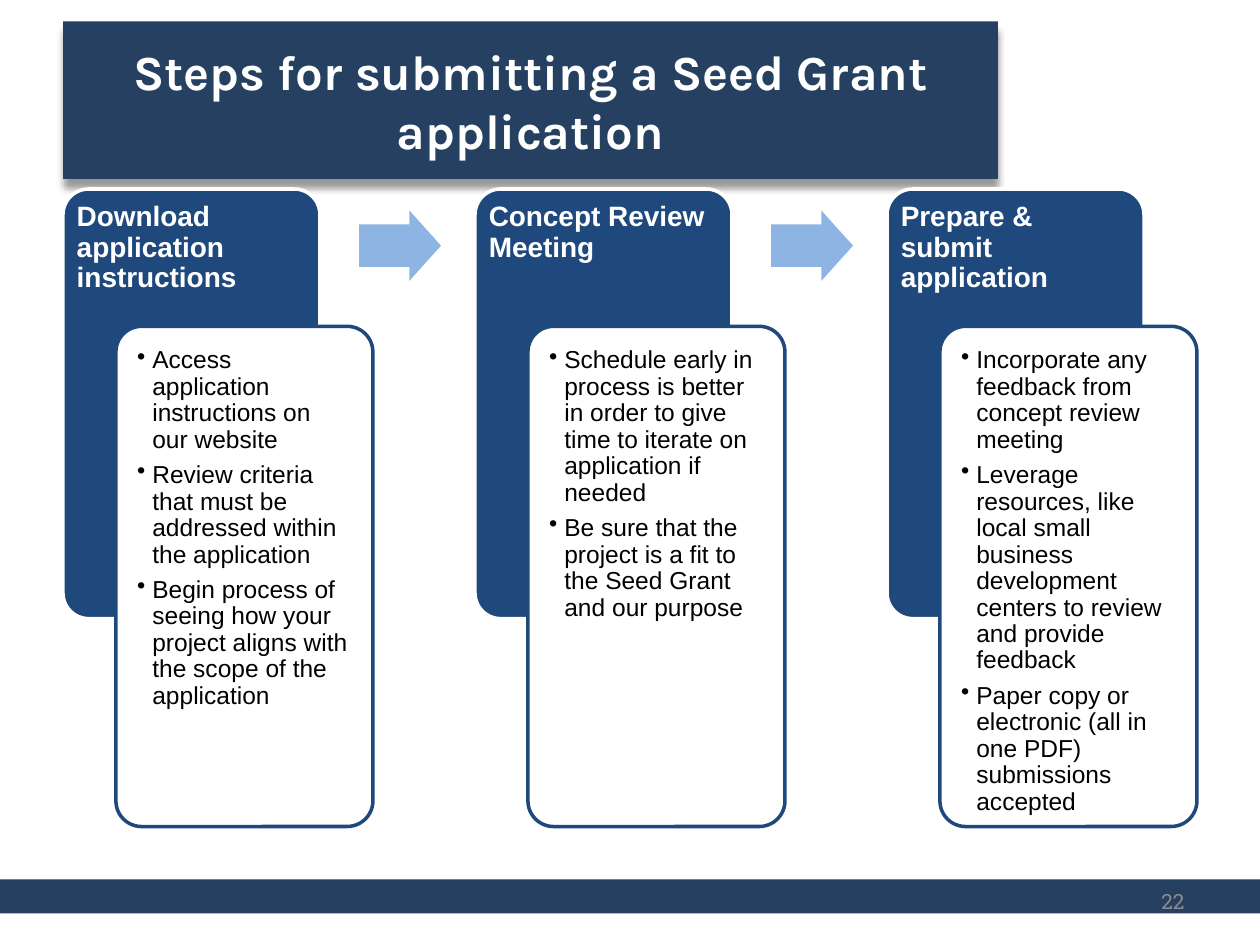
from dataclasses import dataclass

from lxml import etree
from pptx import Presentation
from pptx.dml.color import RGBColor
from pptx.enum.shapes import MSO_SHAPE as Preset
from pptx.enum.text import MSO_ANCHOR as Anchor, MSO_AUTO_SIZE as AutoSize, PP_ALIGN as Align
from pptx.oxml import parse_xml
from pptx.oxml.ns import nsdecls, qn
from pptx.slide import Slide
from pptx.util import Inches, Pt

NAVY = RGBColor(0x25, 0x40, 0x61)
BLUE = RGBColor(0x1F, 0x49, 0x7D)
LIGHT_BLUE = RGBColor(0x8E, 0xB4, 0xE3)
WHITE = RGBColor(0xFF, 0xFF, 0xFF)
BLACK = RGBColor(0, 0, 0)
GRAY = RGBColor(0x8C, 0x8C, 0x8C)

STEPS = [
    ("Download application instructions", [
        "Access application instructions on our website",
        "Review criteria that must be addressed within the application",
        "Begin process of seeing how your project aligns with the scope of the application",
    ]),
    ("Concept Review Meeting", [
        "Schedule early in process is better in order to give time to iterate on application if needed",
        "Be sure that the project is a fit to the Seed Grant and our purpose",
    ]),
    ("Prepare & submit application", [
        "Incorporate any feedback from concept review meeting",
        "Leverage resources, like local small business development centers to review and provide feedback",
        "Paper copy or electronic (all in one PDF) submissions accepted",
    ]),
]
FIRST_LEFT = 0.5
STEP_PITCH = 3.27
CARD_WIDTH = 2.04
SHADOW = (
    f'<a:effectLst {nsdecls("a")}><a:outerShdw blurRad="{Pt(4)}" dist="{Pt(5)}" '
    'dir="5400000" algn="t" rotWithShape="0"><a:srgbClr val="000000">'
    '<a:alpha val="40000"/></a:srgbClr></a:outerShdw></a:effectLst>'
)


def add_bullet(paragraph, indent):
    properties = paragraph._p.get_or_add_pPr()
    properties.set("marL", str(indent))
    properties.set("indent", str(-indent))
    etree.SubElement(properties, qn("a:buChar")).set("char", "•")


def write_text(shape, paragraphs, *, size, color, font="Arial", bold=False, align=Align.LEFT,
               anchor=Anchor.TOP, insets=(0.1, 0.05, 0.1, 0.05), line_spacing=1.0,
               before=0, after=0, bullet_indent=None):
    frame = shape.text_frame
    frame.word_wrap = True
    frame.auto_size = AutoSize.NONE
    frame.vertical_anchor = anchor
    (frame.margin_left, frame.margin_top,
     frame.margin_right, frame.margin_bottom) = map(Inches, insets)
    for index, text in enumerate(paragraphs):
        paragraph = frame.add_paragraph() if index else frame.paragraphs[0]
        paragraph.alignment = align
        paragraph.line_spacing = line_spacing
        paragraph.space_before = Pt(before if index else 0)
        paragraph.space_after = Pt(after)
        if bullet_indent:
            add_bullet(paragraph, Inches(bullet_indent))
        run = paragraph.add_run()
        run.text = text
        run.font.name = font
        run.font.size = Pt(size)
        run.font.bold = bold
        run.font.color.rgb = color


@dataclass
class SlideBuilder:
    slide: Slide
    title_font: str = "Karla"
    number_font: str = "Roboto Slab"
    line_width: float = 2

    def title(self, text, left, top, width, height):
        shape = self.slide.shapes.title
        shape.left, shape.top = Inches(left), Inches(top)
        shape.width, shape.height = Inches(width), Inches(height)
        shape.fill.solid()
        shape.fill.fore_color.rgb = NAVY
        shape._element.spPr.append(parse_xml(SHADOW))
        write_text(shape, [text], size=28, color=WHITE, font=self.title_font, bold=True,
                   align=Align.CENTER, anchor=Anchor.MIDDLE)

    def shape(self, preset, left, top, width, height, fill, line=None):
        shape = self.slide.shapes.add_shape(
            preset, Inches(left), Inches(top), Inches(width), Inches(height))
        shape.shadow.inherit = False
        shape.fill.solid()
        shape.fill.fore_color.rgb = fill
        if line is None:
            shape.line.fill.background()
        else:
            shape.line.color.rgb = line
            shape.line.width = Pt(self.line_width)
        return shape

    def card(self, left, top, height, fill, line):
        shape = self.shape(Preset.ROUNDED_RECTANGLE, left, top, CARD_WIDTH, height, fill, line)
        shape.adjustments[0] = 0.1
        return shape

    def step(self, left, heading, details):
        header = self.card(left, 1.5, 3.41, BLUE, WHITE)
        write_text(header, [heading], size=16, color=WHITE, bold=True,
                   insets=(0.05, 0.05, 0.05, 2.26), line_spacing=0.9)
        body = self.card(left + 0.42, 2.59, 3.97, WHITE, BLUE)
        write_text(body, details, size=14, color=BLACK, insets=(0.11,) * 4,
                   line_spacing=0.9, before=3, after=2, bullet_indent=0.12)

    def arrow(self, left):
        shape = self.shape(Preset.RIGHT_ARROW, left, 1.67, 0.65, 0.56, LIGHT_BLUE)
        shape.adjustments[0] = 0.6
        shape.adjustments[1] = 0.45

    def slide_number(self, text, left, top, width, height):
        box = self.slide.shapes.add_textbox(
            Inches(left), Inches(top), Inches(width), Inches(height))
        write_text(box, [text], size=12, color=GRAY, font=self.number_font,
                   align=Align.RIGHT, anchor=Anchor.MIDDLE)


def main():
    presentation = Presentation()
    presentation.slide_width = Inches(10)
    presentation.slide_height = Inches(7.5)
    builder = SlideBuilder(presentation.slides.add_slide(presentation.slide_layouts[5]))

    builder.shape(Preset.RECTANGLE, 0, 6.98, 10, 0.27, NAVY)
    builder.title("Steps for submitting a Seed Grant application", 0.5, 0.17, 7.42, 1.25)
    for index, (heading, details) in enumerate(STEPS):
        left = FIRST_LEFT + index * STEP_PITCH
        builder.step(left, heading, details)
        if index < len(STEPS) - 1:
            builder.arrow(left + 2.35)
    builder.slide_number("22", 7.17, 6.95, 2.33, 0.4)

    presentation.save("out.pptx")


if __name__ == "__main__":
    main()
